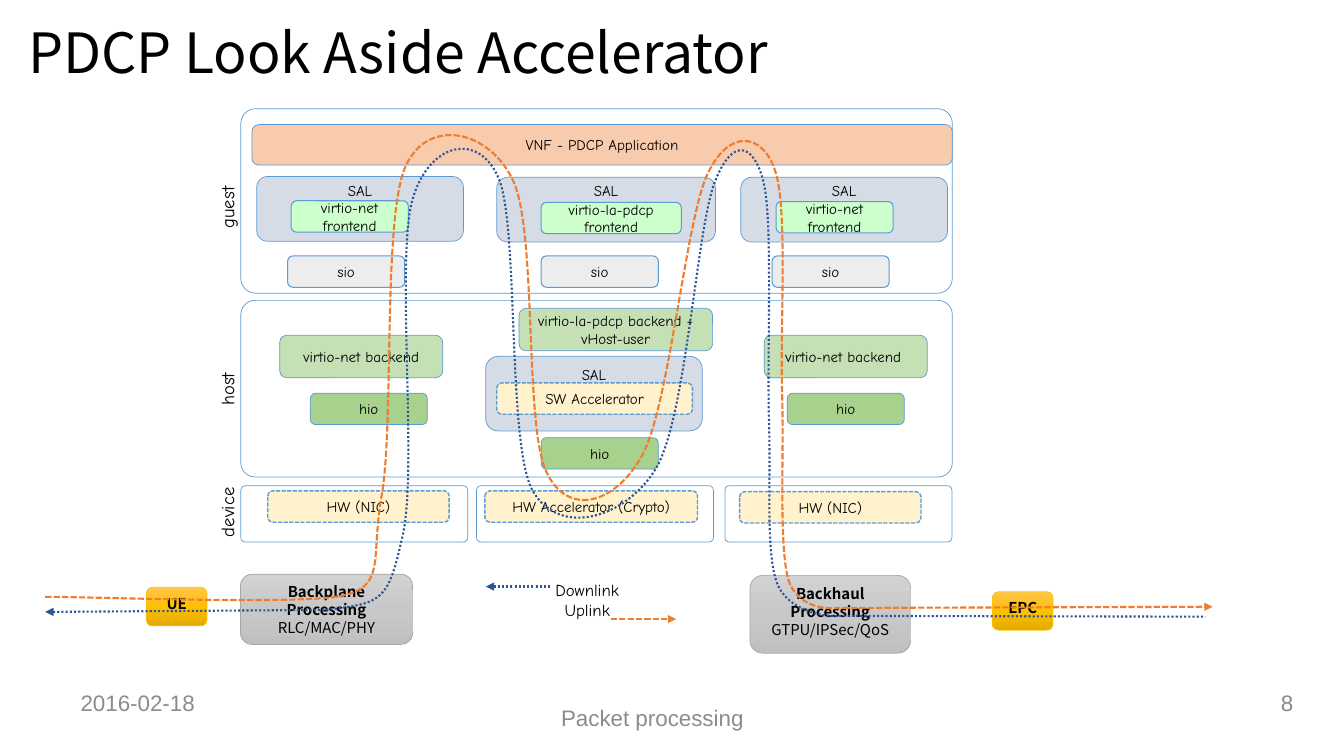
"""Builds the PDCP look-aside accelerator slide."""
from copy import deepcopy
from lxml import etree
from pptx import Presentation
from pptx import util as u
from pptx.dml.color import RGBColor
from pptx.enum import dml, shapes, text
from pptx.oxml.ns import qn

HAND, SANS, PLAIN = "Comic Neue", "Noto Sans CJK SC", "Arial"
BLUE, ORANGE, NAVY = "5B9BD5", "ED7D31", "2F5597"
GREY_BLEND = ("D2D2D2", "C8C8C8", "C0C0C0")
GOLD_BLEND = ("FFC64B", "FFC000", "E3AB00")
DASH, DOT = dml.MSO_LINE.SQUARE_DOT, dml.MSO_LINE.ROUND_DOT
SYSTEM_DASHES = {DASH: "sysDash", DOT: "sysDot"}
LEFT, CENTER, RIGHT = text.PP_ALIGN.LEFT, text.PP_ALIGN.CENTER, text.PP_ALIGN.RIGHT
TOP, MIDDLE = text.MSO_ANCHOR.TOP, text.MSO_ANCHOR.MIDDLE

PANELS = [
    (6.07, 2.74, 17.93, 4.65), (6.07, 7.57, 17.93, 4.45),
    (6.07, 12.24, 5.72, 1.42), (12.01, 12.24, 5.97, 1.42), (18.27, 12.24, 5.72, 1.42),
]
STYLES = {
    "application": {"fill": "F8CBAD", "width": 0.5, "height": 1.02},
    "sal": {"fill": "D6DCE5", "width": 0.5, "height": 1.63, "bottom": 1.08},
    "accelerator": {"fill": "FFF2CC", "width": 1, "height": 0.79, "dash": DASH},
    "sio": {"fill": "EDEDED", "width": 0.75, "height": 0.79},
    "frontend": {"fill": "CCFFCC", "width": 0.75, "height": 0.79},
    "hio": {"fill": "A9D18E", "width": 0.5, "height": 0.79},
    "backend": {"fill": "C5E0B4", "width": 0.5, "height": 1.07},
}
BLOCKS = [
    ("application", "VNF - PDCP Application", 6.35, 3.14, 17.65),
    ("sal", "SAL", 6.47, 4.45, 5.21),
    ("sal", "SAL", 12.52, 4.47, 5.51),
    ("sal", "SAL", 18.67, 4.47, 5.21),
    ("sal", "SAL", 12.24, 8.98, 5.46, 1.88),
    ("accelerator", "SW Accelerator", 12.52, 9.65, 4.93),
    ("accelerator", "HW (NIC)", 6.75, 12.37, 4.57),
    ("accelerator", "HW Accelerator (Crypto)", 12.22, 12.37, 5.36),
    ("accelerator", "HW (NIC)", 18.64, 12.39, 4.57),
    ("sio", "sio", 7.25, 6.45, 2.95),
    ("sio", "sio", 13.64, 6.45, 2.95),
    ("sio", "sio", 19.46, 6.45, 2.95),
    ("frontend", "virtio-net frontend", 7.34, 5.06, 2.95),
    ("frontend", "virtio-la-pdcp frontend", 13.64, 5.1, 3.53),
    ("frontend", "virtio-net frontend", 19.56, 5.08, 2.95),
    ("hio", "hio", 7.82, 9.91, 2.95),
    ("hio", "hio", 13.64, 11.03, 2.95),
    ("hio", "hio", 19.84, 9.91, 2.95),
    ("backend", "virtio-net backend", 7.05, 8.45, 4.11),
    ("backend", "virtio-la-pdcp backend + vHost-user", 13.08, 7.77, 4.88),
    ("backend", "virtio-net backend ", 19.26, 8.45, 4.11),
]
ENDPOINTS = [
    ("Backhaul Processing", " GTPU/IPSec/QoS", (18.9, 14.5, 4.05, 1.96), GREY_BLEND, "A5A5A5"),
    ("Backplane Processing ", "RLC/MAC/PHY", (6.06, 14.47, 4.34, 1.77), GREY_BLEND, "A5A5A5"),
    ("EPC", "", (25.01, 14.91, 1.53, 0.97), GOLD_BLEND, "FFC000"),
    ("UE", "", (3.69, 14.8, 1.53, 0.97), GOLD_BLEND, "FFC000"),
]
LAYER_AXIS = 5.73
LAYERS = [("guest", 5.14, 1.73), ("host", 9.72, 1.5), ("device", 12.82, 1.93)]
CAPTIONS = [
    (["PDCP Look Aside Accelerator"], (0.46, 0.76, 27.08, 1.27),
     {"size": 39.6, "font": SANS, "align": LEFT, "spacing": 0.9}),
    (["2016-02-18"], (1.7, 17.02, 6.17, 1.35),
     {"size": 16, "font": PLAIN, "color": "8C8C8C", "align": LEFT, "side": 0.33}),
    (["Packet processing"], (8.16, 17.4, 16.56, 1.35),
     {"size": 16, "font": PLAIN, "color": "8C8C8C", "side": 0.33}),
    (["8"], (30.6, 17.02, 2.24, 1.35),
     {"size": 16, "font": PLAIN, "color": "898989", "align": RIGHT}),
]
LEGEND = (["Downlink", "Uplink"], (13.44, 14.5, 2.72, 1.24))
UPLINK = [
    [(1.14, 15.04)],
    [(2.26, 15.04), (6.81, 15.21), (8.31, 15.06)],
    [(9.83, 14.88), (9.3, 14.22), (9.63, 12.42)],
    [(9.93, 10.59), (9.65, 5.54), (10.21, 4.22)],
    [(10.77, 2.92), (12.34, 3.28), (12.93, 4.55)],
    [(13.54, 5.84), (13.21, 10.74), (13.77, 11.89)],
    [(14.3, 13.03), (15.49, 12.73), (16.18, 11.48)],
    [(16.87, 10.24), (17.27, 5.59), (17.83, 4.39)],
    [(18.39, 3.2), (19.23, 3.38), (19.53, 4.29)],
    [(19.86, 5.21), (19.66, 8.15), (19.71, 9.86)],
    [(19.76, 11.56), (19.63, 13.67), (19.86, 14.58)],
    [(20.12, 15.47), (21.16, 15.32), (21.16, 15.32)],
    [(30.56, 15.29)],
]
DOWNLINK = [
    [(1.14, 15.42)],
    [(8.2, 15.37)],
    [(9.68, 15.19), (9.78, 15.16), (10.16, 13.44)],
    [(10.52, 11.73), (9.98, 6.55), (10.39, 5.05)],
    [(10.8, 3.58), (12.07, 3.3), (12.57, 4.5)],
    [(13.08, 5.72), (12.78, 11.13), (13.41, 12.34)],
    [(14.07, 13.56), (15.77, 13.08), (16.54, 11.79)],
    [(17.3, 10.49), (17.55, 5.79), (18.01, 4.6)],
    [(18.47, 3.4), (19.02, 3.63), (19.25, 4.62)],
    [(19.48, 5.61), (19.33, 8.94), (19.38, 10.59)],
    [(19.43, 12.27), (19.3, 13.79), (19.56, 14.63)],
    [(19.81, 15.44), (20.9, 15.52), (20.9, 15.52)],
    [(30.38, 15.54)],
]
FLOWS = [
    (UPLINK, (15.39, 17.04, 15.6), ORANGE, DASH, "tailEnd", (3.4, 15.32)),
    (DOWNLINK, (12.24, 13.87, 14.78), NAVY, DOT, "headEnd", (3.73, 15.54)),
]


def paint(color_format, value):
    color_format.rgb = RGBColor.from_string(value)


def outline(line, color, width, dash=None, arrow=None):
    paint(line.color, color)
    line.width = u.Pt(width)
    if dash:
        line.dash_style = dash
        line._ln.find(qn("a:prstDash")).set("val", SYSTEM_DASHES[dash])
    if arrow:
        etree.SubElement(line._ln, qn("a:" + arrow)).set("type", "triangle")


def write(shape, paragraphs, size=10.7, font=HAND, color="000000", align=CENTER,
          anchor=MIDDLE, spacing=None, side=0.25, bottom=0.13, wrap=True):
    frame = shape.text_frame
    settings = {"word_wrap": wrap, "vertical_anchor": anchor, "margin_left": u.Cm(side),
                "margin_right": u.Cm(side), "margin_top": u.Cm(0.13), "margin_bottom": u.Cm(bottom)}
    for name, value in settings.items():
        setattr(frame, name, value)
    for index, content in enumerate(paragraphs):
        para = frame.add_paragraph() if index else frame.paragraphs[0]
        para.alignment, para.line_spacing = align, spacing
        spans = [(content, False)] if isinstance(content, str) else content
        for words, bold in spans:
            span = para.add_run()
            span.text = words
            for name, value in {"size": u.Pt(size), "name": font, "bold": bold}.items():
                setattr(span.font, name, value)
            paint(span.font.color, color)


def add_box(page, place, fill=None, color=None, width=0.5, dash=None):
    box = page.shapes.add_shape(shapes.MSO_SHAPE.ROUNDED_RECTANGLE, *map(u.Cm, place))
    box.shadow.inherit = False
    if color:
        outline(box.line, color, width, dash)
    else:
        box.line.fill.background()
    if fill is None:
        box.fill.background()
        box.adjustments[0] = 0.08
    elif isinstance(fill, str):
        box.fill.solid()
        paint(box.fill.fore_color, fill)
    else:
        box.fill.gradient()
        box.fill.gradient_angle = 270
        stops = box._element.spPr.find(".//" + qn("a:gsLst"))
        stops.insert(1, deepcopy(stops[0]))
        for index, stop in enumerate(box.fill.gradient_stops):
            stop.position = index / 2
            paint(stop.color, fill[index])
    return box


def add_curve(page, segments, top, bottom):
    left, right = segments[0][0][0], segments[-1][0][0]
    builder = page.shapes.build_freeform(u.Cm(left), u.Cm(top))
    builder.add_line_segments([(u.Cm(right), u.Cm(bottom))], close=False)
    curve = builder.convert_to_shape()
    outline_path = curve._element.spPr.find(".//" + qn("a:path"))
    for child in list(outline_path):
        outline_path.remove(child)
    for index, points in enumerate(segments):
        kind = "moveTo" if index == 0 else "cubicBezTo" if len(points) == 3 else "lnTo"
        step = etree.SubElement(outline_path, qn("a:" + kind))
        for x, y in points:
            etree.SubElement(step, qn("a:pt"), x=str(u.Cm(x) - u.Cm(left)), y=str(u.Cm(y) - u.Cm(top)))
    curve.shadow.inherit = False
    curve.fill.background()
    return curve


def main():
    deck = Presentation()
    deck.slide_width, deck.slide_height = u.Cm(33.87), u.Cm(19.05)
    page = deck.slides.add_slide(deck.slide_layouts[6])
    for paragraphs, place, style in CAPTIONS:
        write(page.shapes.add_textbox(*map(u.Cm, place)), paragraphs, **style)
    for place in PANELS:
        add_box(page, place, color=BLUE)
    for kind, label, left, top, width, *height in BLOCKS:
        style = STYLES[kind]
        place = (left, top, width, height[0] if height else style["height"])
        box = add_box(page, place, style["fill"], BLUE, style["width"], style.get("dash"))
        write(box, [label], bottom=style.get("bottom", 0.13))
    for name, detail, place, blend, edge in ENDPOINTS:
        spans = [(name, True)] + ([(detail, False)] if detail else [])
        write(add_box(page, place, blend, edge), [spans], font=SANS, anchor=TOP)
    for label, middle, width in LAYERS:
        place = (LAYER_AXIS - width / 2, middle - 0.42, width, 0.84)
        box = page.shapes.add_textbox(*map(u.Cm, place))
        box.rotation = 270
        write(box, [label], size=13.3, align=LEFT, anchor=TOP, wrap=False)
    words, place = LEGEND
    write(add_box(page, place), words, size=12)
    for segments, (start, end, level), color, dash, arrow, extent in FLOWS:
        curve = add_curve(page, segments, *extent)
        key = page.shapes.add_connector(
            shapes.MSO_CONNECTOR.STRAIGHT, *map(u.Cm, (start, level, end, level)))
        etree.SubElement(key._element.spPr, qn("a:effectLst"))
        for stroke in (curve, key):
            outline(stroke.line, color, 1.5, dash, arrow)
    deck.save("out.pptx")


if __name__ == "__main__":
    main()
